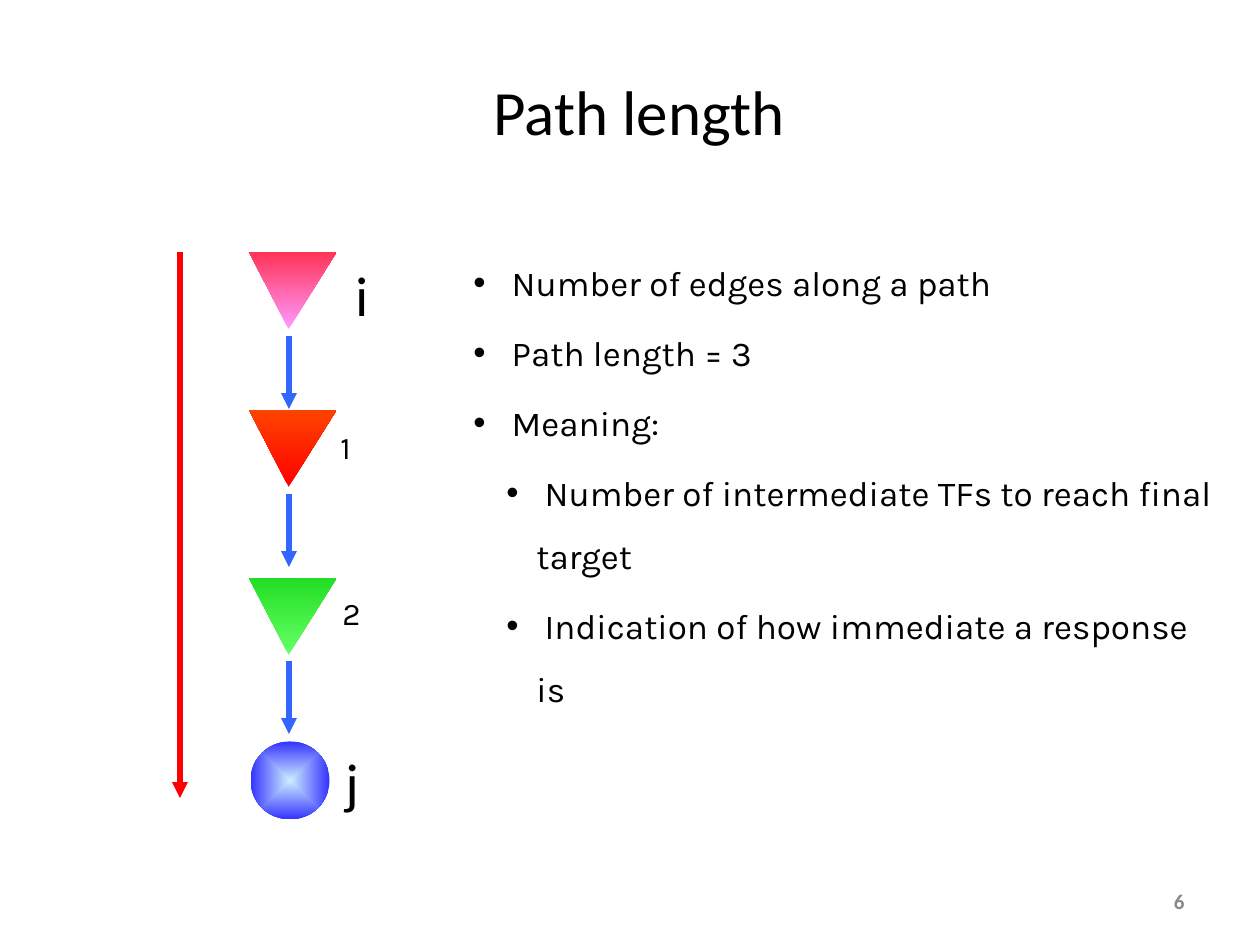
from lxml.etree import SubElement
from pptx import Presentation
from pptx.dml.color import RGBColor
from pptx.enum.shapes import MSO_CONNECTOR, MSO_SHAPE
from pptx.enum.text import MSO_ANCHOR, PP_ALIGN
from pptx.oxml import parse_xml
from pptx.oxml.ns import nsdecls, qn
from pptx.util import Pt

PX = 914400 // 126
COLORS = {"text": "000000", "number": "898989", "edge": "3366FF", "path": "FF0000"}

# top of the triangle, gradient from apex to base
FACTORS = [(234, "FF99FF", "FF0000"), (392, "FF0000", "FF6600"), (560, "66FF66", "00CC00")]
TARGET = (251, 741, 78, 79)
TARGET_COLORS = ("CCECFF", "3333FF")
EDGE_TOPS = [336, 494, 661]
EDGE_X, EDGE_LENGTH = 289, 73
PATH_X, PATH_TOP, PATH_BOTTOM = 180, 252, 798

# text, box, format
LABELS = [
    ("Path length", (481, 66, 347, 89), dict(size=36, wrap=False)),
    ("i", (343, 254, 59, 81), dict(size=32)),
    ("j", (333, 741, 59, 81), dict(size=32)),
    ("1", (328, 422, 48, 63), dict(size=18, font="Karla", before=3.6, wrap=False)),
    ("2", (330, 588, 48, 63), dict(size=18, font="Karla", before=3.6, wrap=False)),
    ("6", (903, 876, 294, 50), dict(size=12, bold=True, color="number",
                                    align=PP_ALIGN.RIGHT, anchor=MSO_ANCHOR.MIDDLE)),
]
POINTS = [
    (0, " Number of edges along a path"),
    (0, " Path length = 3"),
    (0, " Meaning:"),
    (1, " Number of intermediate TFs to reach final target"),
    (1, " Indication of how immediate a response is"),
]
POINTS_BOX = (461, 234, 767, 543)
POINT_MARGINS, HANGING = (30, 63), 30


def emu(box):
    return [length * PX for length in box]


def add_text(slide, text, box, size, font="Calibri", color="text", bold=False, before=0,
             spacing=None, align=PP_ALIGN.LEFT, anchor=MSO_ANCHOR.TOP, wrap=True):
    """Add a text box with one paragraph per line of text."""
    frame = slide.shapes.add_textbox(*emu(box)).text_frame
    frame.word_wrap = wrap
    frame.vertical_anchor = anchor
    frame.text = text
    for paragraph in frame.paragraphs:
        paragraph.alignment = align
        paragraph.space_before = Pt(before)
        paragraph.line_spacing = spacing
        style = paragraph.runs[0].font
        style.name, style.size, style.bold = font, Pt(size), bold
        style.color.rgb = RGBColor.from_string(COLORS[color])
    return frame


def add_bullet(paragraph, margin):
    props = paragraph._p.get_or_add_pPr()
    props.set("marL", str(margin * PX))
    props.set("indent", str(-HANGING * PX))
    SubElement(props, qn("a:buFont")).set("typeface", "Arial")
    SubElement(props, qn("a:buChar")).set("char", "•")


def add_node(slide, kind, box, rotation, colors, direction):
    """Add an unlined shape whose gradient keeps its direction when rotated."""
    node = slide.shapes.add_shape(kind, *emu(box))
    node.shadow.inherit = False
    node.rotation = rotation
    node.line.fill.background()
    first, last = colors
    gradient = parse_xml(
        f'<a:gradFill {nsdecls("a")} rotWithShape="0"><a:gsLst>'
        f'<a:gs pos="0"><a:srgbClr val="{first}"/></a:gs>'
        f'<a:gs pos="100000"><a:srgbClr val="{last}"/></a:gs>'
        f'</a:gsLst>{direction}</a:gradFill>')
    node._element.spPr.find(qn("a:prstGeom")).addnext(gradient)
    return node


def add_factor(slide, top, colors):
    factor = add_node(slide, MSO_SHAPE.ISOSCELES_TRIANGLE, (236, top, 90, 74), 122,
                      colors, '<a:lin ang="5400000" scaled="1"/>')
    factor.adjustments[0] = 0.49
    for flip in ("flipH", "flipV"):
        factor._element.spPr.xfrm.set(flip, "1")


def add_arrow(slide, x, top, bottom, color):
    arrow = slide.shapes.add_connector(MSO_CONNECTOR.STRAIGHT, *emu((x, top, x, bottom)))
    arrow.line.color.rgb = RGBColor.from_string(COLORS[color])
    arrow.line.width = Pt(3)
    SubElement(arrow.line._get_or_add_ln(), qn("a:tailEnd")).set("type", "triangle")
    SubElement(arrow._element.spPr, qn("a:effectLst"))


def main():
    deck = Presentation()
    deck.slide_width, deck.slide_height = emu((1260, 945))
    slide = deck.slides.add_slide(deck.slide_layouts[6])

    for top, *colors in FACTORS:
        add_factor(slide, top, colors)
    add_node(slide, MSO_SHAPE.OVAL, TARGET, 90, TARGET_COLORS,
             '<a:path path="rect"><a:fillToRect l="50000" t="50000" r="50000" b="50000"/></a:path>')
    for top in EDGE_TOPS:
        add_arrow(slide, EDGE_X, top, top + EDGE_LENGTH, "edge")
    add_arrow(slide, PATH_X, PATH_TOP, PATH_BOTTOM, "path")

    for text, box, style in LABELS:
        add_text(slide, text, box, **style)
    points = add_text(slide, "\n".join(text for _, text in POINTS), POINTS_BOX,
                      size=20, font="Karla", before=4, spacing=1.5)
    for paragraph, (level, _) in zip(points.paragraphs, POINTS):
        paragraph.level = level
        add_bullet(paragraph, POINT_MARGINS[level])

    deck.save("out.pptx")


if __name__ == "__main__":
    main()
